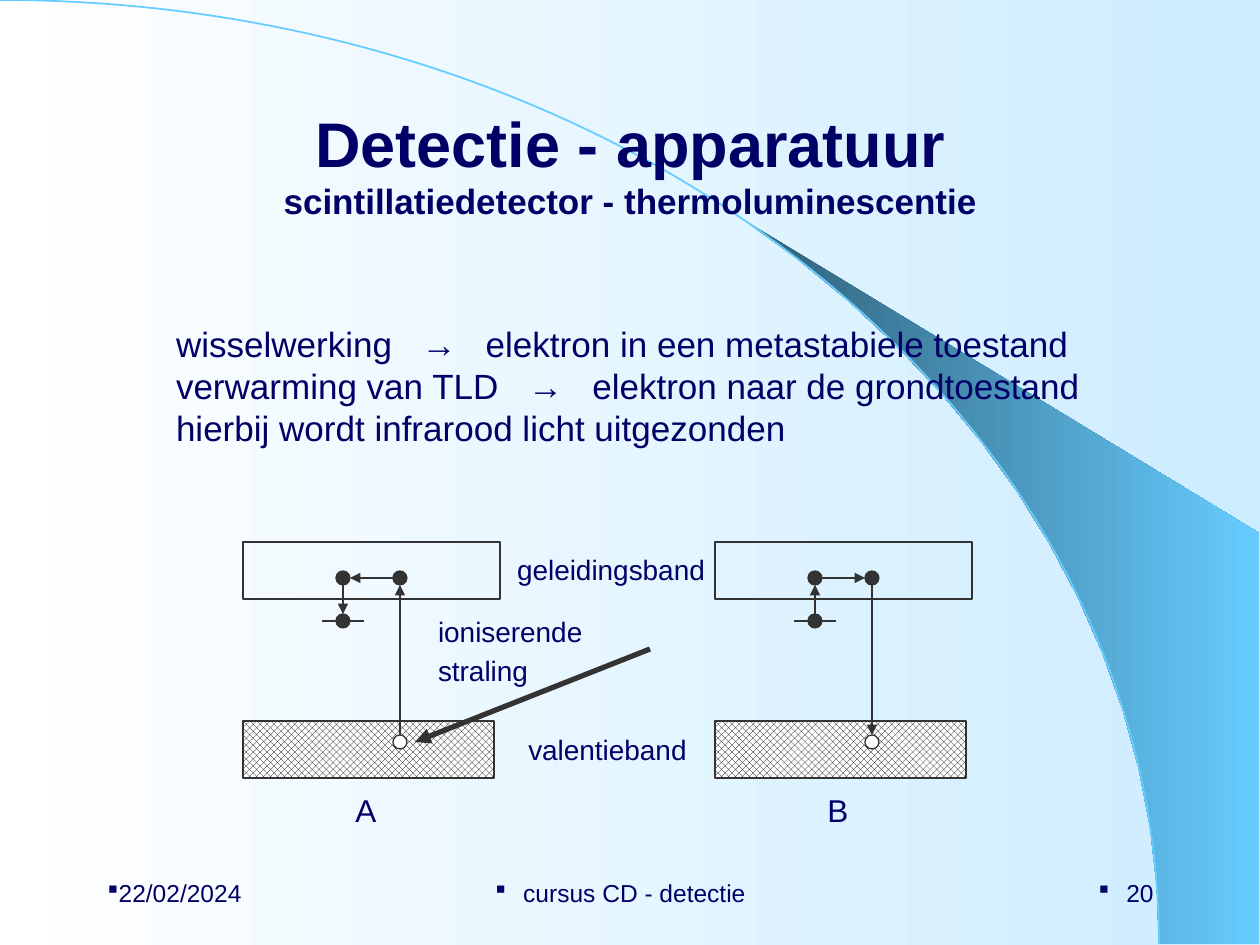
from math import asin, cos, pi, sin

from lxml.etree import SubElement
from pptx import Presentation
from pptx.dml.color import RGBColor
from pptx.enum.dml import MSO_PATTERN_TYPE as PATTERN
from pptx.enum.shapes import MSO_CONNECTOR as CONN, MSO_SHAPE as SHAPE
from pptx.enum.text import MSO_ANCHOR as ANCHOR, MSO_AUTO_SIZE as AUTO, PP_ALIGN as ALIGN
from pptx.oxml.ns import qn
from pptx.util import Emu, Pt

C = {"navy": "000066", "ink": "333333", "sky": "66CCFF", "steel": "2F5E75",
     "pale": "CCECFF", "white": "FFFFFF", "black": "000000"}
FONT = "Arial"
W, H = 1260, 945


def px(n):
    return Emu(round(n * 914400 / 126))


def rgb(name):
    return RGBColor.from_string(C[name])


def place(sp, x, y, w, h):
    sp.left, sp.top, sp.width, sp.height = px(x), px(y), px(w), px(h)


def gradient(fill, start, end):
    fill.gradient()
    fill.gradient_angle = 0
    for stop, name, pos in zip(fill.gradient_stops, (start, end), (0, 1)):
        stop.color.rgb = rgb(name)
        stop.position = pos


def add_run(p, text, size, bold=False):
    r = p.add_run()
    r.text = text
    f = r.font
    f.name, f.size, f.bold = FONT, Pt(size), bold
    f.color.rgb = rgb("navy")
    return r


def text_box(s, box, lines, size, align=ALIGN.LEFT, before=0, inset=None, anchor=ANCHOR.TOP):
    tf = s.shapes.add_textbox(*map(px, box)).text_frame
    tf.word_wrap = True
    tf.vertical_anchor = anchor
    if inset:
        tf.margin_left = tf.margin_right = px(inset[0])
        tf.margin_top = tf.margin_bottom = px(inset[1])
    for i, line in enumerate(lines):
        p = tf.add_paragraph() if i else tf.paragraphs[0]
        p.alignment = align
        p.space_before = Pt(before)
        add_run(p, line, size)
    return tf


def shape(s, kind, x, y, w, h, fill=None):
    sp = s.shapes.add_shape(kind, px(x), px(y), px(w), px(h))
    sp.shadow.inherit = False
    sp.line.color.rgb = rgb("ink")
    sp.line.width = Pt(0.75)
    if fill:
        sp.fill.solid()
        sp.fill.fore_color.rgb = rgb(fill)
    else:
        sp.fill.background()
    return sp


def line(s, start, end, width=0.75, arrow=True):
    cx = s.shapes.add_connector(CONN.STRAIGHT, *map(px, start + end))
    cx.line.color.rgb = rgb("ink")
    cx.line.width = Pt(width)
    if arrow:
        SubElement(cx.line._get_or_add_ln(), qn("a:tailEnd"), type="triangle")
    SubElement(cx._element.spPr, qn("a:effectLst"))


def outline(s, points, close, depth):
    pts = [(px(x), px(y)) for x, y in points]
    fb = s.shapes.build_freeform(*pts[0], scale=1.0)
    fb.add_line_segments(pts[1:], close=close)
    sp = fb.convert_to_shape()
    sp.shadow.inherit = False
    s.shapes._spTree.insert(2 + depth, sp._element)
    return sp


def backdrop(s, x, y, w, h):
    gradient(s.background.fill, "white", "pale")
    rx, ry, steps = 1159, 944, 14
    start = asin(742 / rx)
    angles = [start + (pi / 2 - start) * i / steps for i in range(steps + 1)]
    edge = [(x + rx * sin(t), y + ry * (1 - cos(t))) for t in angles]
    corners = [(x + w - 1, y + h - 1), (x + w - 1, y + 533)]
    wedge = outline(s, edge + corners, True, 0)
    gradient(wedge.fill, "steel", "sky")
    wedge.line.fill.background()

    curve = outline(s, [(x, y), (x + rx, y + ry)], False, 1)
    segment = next(curve._element.iter(qn("a:lnTo")))
    bezier = SubElement(segment.getparent(), qn("a:cubicBezTo"))
    for cx, cy in ((640, 0), (rx, 422), (rx, ry)):
        SubElement(bezier, qn("a:pt"), x=str(px(cx)), y=str(px(cy)))
    segment.getparent().remove(segment)
    curve.fill.background()
    curve.line.color.rgb = rgb("sky")
    curve.line.width = Pt(1)


def title(s, *box):
    sp = s.shapes.title
    place(sp, *box)
    tf = sp.text_frame
    tf.auto_size = AUTO.NONE
    tf.vertical_anchor = ANCHOR.MIDDLE
    p = tf.paragraphs[0]
    p.alignment = ALIGN.CENTER
    add_run(p, "Detectie - apparatuur", 36, True)
    p.add_line_break()
    add_run(p, "scintillatiedetector - thermoluminescentie", 20, True)


def body(s, *box):
    sp = s.placeholders[1]
    place(sp, *box)
    tf = sp.text_frame
    tf.auto_size = AUTO.NONE
    tf.margin_left, tf.margin_top = px(71), px(47)
    lines = [("wisselwerking", "→", "elektron in een metastabiele toestand"),
             ("verwarming van TLD", "→", "elektron naar de grondtoestand"),
             ("hierbij wordt infrarood licht uitgezonden",)]
    for i, parts in enumerate(lines):
        p = tf.add_paragraph() if i else tf.paragraphs[0]
        p.space_before = Pt(0)
        pPr = p._p.get_or_add_pPr()
        pPr.set("marL", "0")
        pPr.set("indent", "0")
        SubElement(pPr, qn("a:buNone"))
        for j, part in enumerate(parts):
            if j:
                gap = add_run(p, " ", 20)
                gap.font._element.set("spc", "1110")
            add_run(p, part, 20)


def footer(s, x, y, w, h):
    items = [("22/02/2024", 0, 262, ALIGN.LEFT, 0, 0),
             ("cursus CD - detectie", 336, 399, ALIGN.CENTER, 28, 20),
             ("20", w - 262, 262, ALIGN.RIGHT, 28, 0)]
    for text, dx, width, align, hang, right in items:
        tf = text_box(s, (x + dx, y, width, h), [text], 14, align, anchor=ANCHOR.MIDDLE)
        pPr = tf.paragraphs[0]._p.get_or_add_pPr()
        for key, n in (("marL", hang), ("marR", right), ("indent", -hang)):
            pPr.set(key, str(px(n)))
        SubElement(pPr, qn("a:buFont"), typeface="Wingdings", charset="2")
        SubElement(pPr, qn("a:buChar"), char="§")


def band_panel(s, x, y, label, reverse):
    left, right, level, trap, hole, rad = x + 100, x + 157, y + 36, y + 79, y + 200, 7
    shape(s, SHAPE.RECTANGLE, x, y, 257, 57)
    valence = shape(s, SHAPE.RECTANGLE, x, y + 179, 251, 57)
    valence.fill.patterned()
    valence.fill.pattern = PATTERN.OUTLINED_DIAMOND
    valence.fill.fore_color.rgb = rgb("black")
    valence.fill.back_color.rgb = rgb("white")
    for cx, cy, fill in ((right, hole, "white"), (right, level, "ink"),
                         (left, level, "ink"), (left, trap, "ink")):
        shape(s, SHAPE.OVAL, cx - rad, cy - rad, 2 * rad, 2 * rad, fill)
    for ends in (((right, hole - rad), (right, level + rad)),
                 ((right - rad, level), (left + rad, level)),
                 ((left, level + rad), (left, trap - rad))):
        line(s, *(ends[::-1] if reverse else ends))
    line(s, (left - 21, trap), (left + 21, trap), arrow=False)
    text_box(s, (left, y + 243, 72, 72), [label], 18, before=3)


def band_diagram(s, x, y):
    band_panel(s, x, y, "A", False)
    band_panel(s, x + 472, y, "B", True)
    inset = (6, 4)
    text_box(s, (x + 257, y + 7, 222, 54), ["geleidingsband"], 16, ALIGN.CENTER, 3, inset)
    text_box(s, (x + 257, y + 186, 215, 54), ["valentieband"], 16, ALIGN.CENTER, 3, inset)
    text_box(s, (x + 189, y + 69, 170, 89), ["ioniserende", "straling"], 16,
             before=3, inset=inset)
    line(s, (x + 407, y + 107), (x + 172, y + 200), 3)


def main():
    prs = Presentation()
    prs.slide_width, prs.slide_height = px(W), px(H)
    s = prs.slides.add_slide(prs.slide_layouts[1])
    backdrop(s, 0, 0, W, H)
    title(s, 95, 84, 1071, 158)
    body(s, 105, 275, 1091, 238)
    band_diagram(s, 243, 542)
    footer(s, 95, 861, 1071, 63)
    prs.save("out.pptx")


if __name__ == "__main__":
    main()
